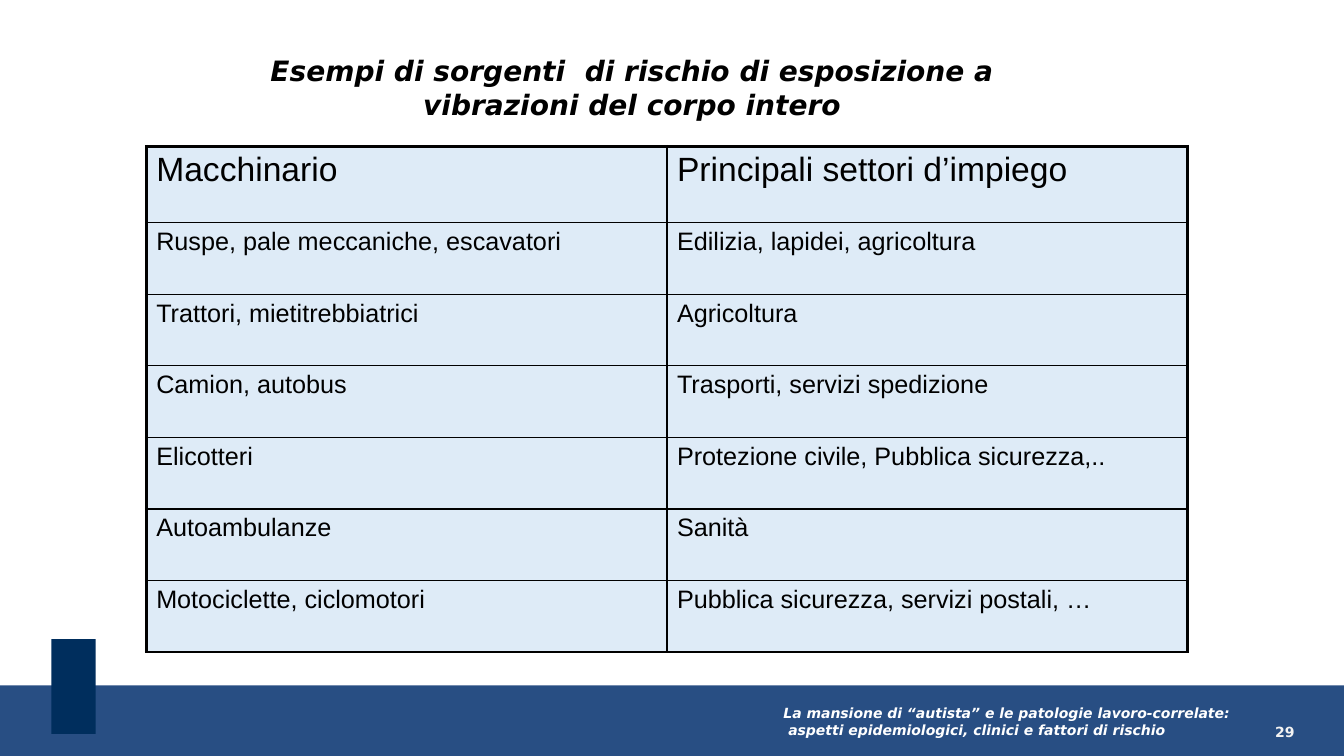
from dataclasses import dataclass

import pptx
import pptx.dml.color
import pptx.enum.shapes
import pptx.enum.text
import pptx.oxml
import pptx.oxml.ns
import pptx.util
from pptx.util import Inches

Align = pptx.enum.text.PP_ALIGN
Anchor = pptx.enum.text.MSO_ANCHOR


@dataclass(frozen=True)
class Theme:
    band: str = "284E83"
    marker: str = "002E5D"
    cell: str = "DEEBF7"
    ink: str = "000000"
    white: str = "FFFFFF"
    number: str = "F2F2F2"
    display_font: str = "DejaVu Sans"
    table_font: str = "Arial"
    title_size: int = 20
    header_size: int = 24
    body_size: int = 18
    footer_size: int = 10
    outer_line: float = 2.25
    inner_line: float = 1


@dataclass(frozen=True)
class Box:
    left: float
    top: float
    width: float
    height: float

    def lengths(self) -> tuple:
        return tuple(Inches(v) for v in (self.left, self.top, self.width, self.height))


@dataclass(frozen=True)
class Bar:
    box: Box
    color: str


@dataclass(frozen=True)
class Source:
    machine: str
    sectors: str


THEME = Theme()
BARS = [
    Bar(Box(0, 6.8, 13.33, 0.7), THEME.band),
    Bar(Box(0.51, 6.34, 0.44, 0.94), THEME.marker),
]
TITLE = "Esempi di sorgenti  di rischio di esposizione a vibrazioni del corpo intero"
CAPTION = [
    "La mansione di “autista” e le patologie lavoro-correlate:",
    " aspetti epidemiologici, clinici e fattori di rischio",
]
SOURCES = [
    Source("Macchinario", "Principali settori d’impiego"),
    Source("Ruspe, pale meccaniche, escavatori", "Edilizia, lapidei, agricoltura"),
    Source("Trattori, mietitrebbiatrici", "Agricoltura"),
    Source("Camion, autobus", "Trasporti, servizi spedizione"),
    Source("Elicotteri", "Protezione civile, Pubblica sicurezza,.."),
    Source("Autoambulanze", "Sanità"),
    Source("Motociclette, ciclomotori", "Pubblica sicurezza, servizi postali, …"),
]
TABLE_BOX = Box(1.45, 1.45, 10.33, 5.02)
HEADER_HEIGHT = 0.76
ROW_HEIGHT = 0.71


def rgb(color: str):
    return pptx.dml.color.RGBColor.from_string(color)


def set_all(target, values: dict) -> None:
    for name, value in values.items():
        setattr(target, name, value)


def write(tf, lines: list, color: str, size: float, font: str,
          align=Align.LEFT, **style) -> None:
    """Fill a text frame with unbulleted, evenly formatted paragraphs."""
    for i, line in enumerate(lines):
        p = tf.paragraphs[0] if i == 0 else tf.add_paragraph()
        pPr = p._p.get_or_add_pPr()
        set_all(p, {"alignment": align, "space_before": pptx.util.Pt(0)})
        pPr.set("marL", "0")
        pPr.set("indent", "0")
        pptx.oxml.ns.qn("a:buNone")
        pPr.append(pptx.oxml.parse_xml(
            f'<a:buNone {pptx.oxml.ns.nsdecls("a")}/>'))
        r = p.add_run()
        r.text = line
        set_all(r.font, {"name": font, "size": pptx.util.Pt(size), **style})
        r.font.color.rgb = rgb(color)


def place(sp, box: Box, inset: tuple = (0, 0), wrap: bool = True) -> None:
    set_all(sp, dict(zip(("left", "top", "width", "height"), box.lengths())))
    x, y = (Inches(v) for v in inset)
    set_all(sp.text_frame, {
        "margin_left": x, "margin_right": x, "margin_top": y, "margin_bottom": y,
        "word_wrap": wrap, "vertical_anchor": Anchor.TOP,
        "auto_size": pptx.enum.text.MSO_AUTO_SIZE.NONE,
    })


def add_bar(s, bar: Bar) -> None:
    """Draw a filled bar behind the title and body placeholders."""
    sp = s.shapes.add_shape(pptx.enum.shapes.MSO_SHAPE.RECTANGLE, *bar.box.lengths())
    sp.shadow.inherit = False
    sp.fill.solid()
    sp.fill.fore_color.rgb = rgb(bar.color)
    sp.line.fill.background()
    s.shapes.title.element.addprevious(sp.element)


def set_borders(cell, widths: dict) -> None:
    tcPr = cell._tc.get_or_add_tcPr()
    for side in "LRTB":
        tcPr.append(pptx.oxml.parse_xml(
            f'<a:ln{side} {pptx.oxml.ns.nsdecls("a")} w="{pptx.util.Pt(widths[side])}">'
            f'<a:solidFill><a:srgbClr val="{THEME.ink}"/></a:solidFill></a:ln{side}>'))


def add_sources_table(s, sources: list) -> None:
    rows, cols = len(sources), 2
    tbl = s.shapes.add_table(rows, cols, *TABLE_BOX.lengths()).table
    set_all(tbl, {"first_row": False, "horz_banding": False})
    for col in tbl.columns:
        col.width = Inches(TABLE_BOX.width / cols)
    for i, source in enumerate(sources):
        header = i == 0
        tbl.rows[i].height = Inches(HEADER_HEIGHT if header else ROW_HEIGHT)
        for j, text in enumerate((source.machine, source.sectors)):
            cell = tbl.cell(i, j)
            edges = {"L": j == 0, "R": j == cols - 1, "T": header, "B": i == rows - 1}
            set_borders(cell, {side: THEME.outer_line if outer else THEME.inner_line
                               for side, outer in edges.items()})
            cell.fill.solid()
            cell.fill.fore_color.rgb = rgb(THEME.cell)
            write(cell.text_frame, [text], THEME.ink,
                  THEME.header_size if header else THEME.body_size, THEME.table_font)


def main() -> None:
    prs = pptx.Presentation()
    set_all(prs, {"slide_width": Inches(13.33), "slide_height": Inches(7.5)})
    s = prs.slides.add_slide(prs.slide_layouts[1])
    for bar in BARS:
        add_bar(s, bar)

    title, caption = s.shapes.title, s.placeholders[1]
    place(title, Box(2.49, 0.48, 7.56, 0.77), inset=(0.1, 0.05))
    write(title.text_frame, [TITLE], THEME.ink, THEME.title_size, THEME.display_font,
          Align.CENTER, bold=True, italic=True)
    place(caption, Box(7.77, 6.99, 4.54, 0.23), wrap=False)
    write(caption.text_frame, CAPTION, THEME.white, THEME.footer_size,
          THEME.display_font, bold=True, italic=True)

    number_box = Box(12.45, 7.18, 0.39, 0.28)
    number = s.shapes.add_textbox(*number_box.lengths())
    place(number, number_box)
    write(number.text_frame, ["29"], THEME.number, THEME.footer_size,
          THEME.display_font, Align.RIGHT, bold=True)

    add_sources_table(s, SOURCES)
    prs.save("out.pptx")


if __name__ == "__main__":
    main()
